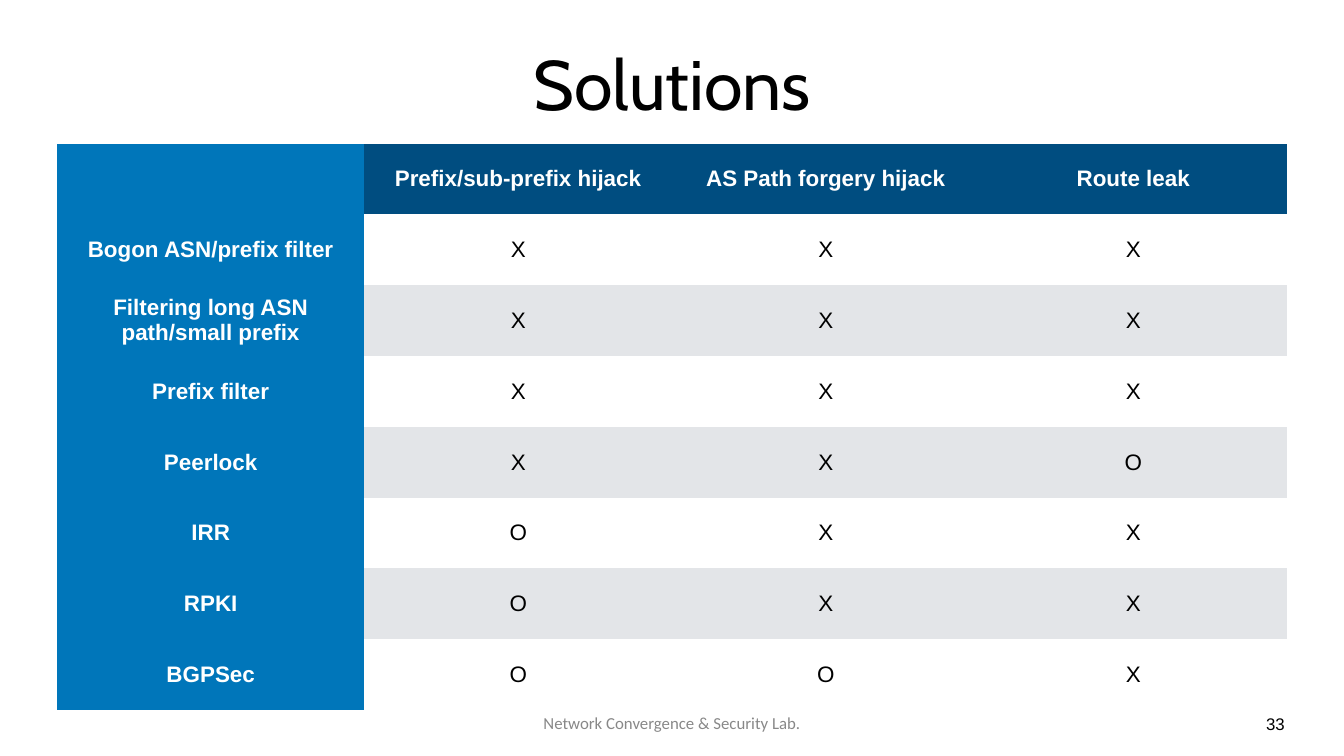
from dataclasses import dataclass

from pptx import Presentation
from pptx.dml.color import RGBColor
from pptx.enum import text
from pptx.util import Cm, Pt


@dataclass(frozen=True)
class Theme:
    navy: str = "004D80"
    blue: str = "0076BA"
    white: str = "FFFFFF"
    band: str = "E3E5E8"
    black: str = "000000"
    gray: str = "888888"
    title: int = 100
    body: int = 32
    small: int = 24
    inset: float = 0.15
    plain: str = "{2D5ABB26-0587-4C30-8999-92F81FD0307C}"


@dataclass(frozen=True)
class Box:
    left: float
    top: float
    width: float
    height: float

    def place(self):
        return Cm(self.left), Cm(self.top), Cm(self.width), Cm(self.height)


THEME = Theme()
HEADS = ["", "Prefix/sub-prefix hijack", "AS Path forgery hijack", "Route leak"]
ROWS = [
    ("Bogon ASN/prefix filter", "XXX"),
    ("Filtering long ASN path/small prefix", "XXX"),
    ("Prefix filter", "XXX"),
    ("Peerlock", "XXO"),
    ("IRR", "OXX"),
    ("RPKI", "OXX"),
    ("BGPSec", "OOX"),
]


def write(frame, words, size, color, face="Arial", bold=False):
    para = frame.paragraphs[0]
    para.alignment = text.PP_ALIGN.CENTER
    run = para.add_run()
    run.text = words
    run.font.name = face
    run.font.size = Pt(size)
    run.font.bold = bold
    run.font.color.rgb = RGBColor.from_string(color)


def pad(target):
    target.margin_left = target.margin_right = Cm(THEME.inset)
    target.margin_top = target.margin_bottom = Cm(THEME.inset)


def add_label(slide, box, words, size, color, face="Arial",
              anchor=text.MSO_ANCHOR.MIDDLE, wrap=True):
    frame = slide.shapes.add_textbox(*box.place()).text_frame
    frame.word_wrap = wrap
    frame.vertical_anchor = anchor
    pad(frame)
    write(frame, words, size, color, face)


def add_title(slide, box):
    add_label(slide, box, "Solutions", THEME.title, THEME.black, "Cabin")


def add_footer(slide, box):
    mid = Box(box.left + 22.23, box.top, 17.53, box.height)
    add_label(slide, mid, "Network Convergence & Security Lab.",
              THEME.small, THEME.gray, "Calibri")
    page = Box(box.left + 60.78, box.top, 1.27, box.height)
    add_label(slide, page, "33", THEME.small, THEME.black,
              anchor=text.MSO_ANCHOR.TOP, wrap=False)


def pick_fill(row, col):
    if col == 0:
        return THEME.blue
    if row == 0:
        return THEME.navy
    return THEME.white if row % 2 else THEME.band


def add_grid(slide, box):
    lines = [HEADS] + [[name, *marks] for name, marks in ROWS]
    table = slide.shapes.add_table(len(lines), len(HEADS), *box.place()).table
    table.first_row = table.horz_banding = False
    table._tbl.tblPr[0].text = THEME.plain
    for col in table.columns:
        col.width = Cm(box.width / len(HEADS))
    for row in table.rows:
        row.height = Cm(box.height / len(lines))
    for r, line in enumerate(lines):
        for c, words in enumerate(line):
            cell = table.cell(r, c)
            cell.fill.solid()
            cell.fill.fore_color.rgb = RGBColor.from_string(pick_fill(r, c))
            cell.vertical_anchor = text.MSO_ANCHOR.MIDDLE
            pad(cell)
            if words:
                head = r == 0 or c == 0
                color = THEME.white if head else THEME.black
                write(cell.text_frame, words, THEME.body, color, bold=head)


def main():
    deck = Presentation()
    deck.slide_width, deck.slide_height = Cm(67.74), Cm(38.1)
    slide = deck.slides.add_slide(deck.slide_layouts[6])
    add_title(slide, Box(2.87, 0.99, 62, 6.35))
    add_grid(slide, Box(2.87, 7.24, 62, 28.55))
    add_footer(slide, Box(2.87, 35.81, 62, 1.25))
    deck.save("out.pptx")


if __name__ == "__main__":
    main()
